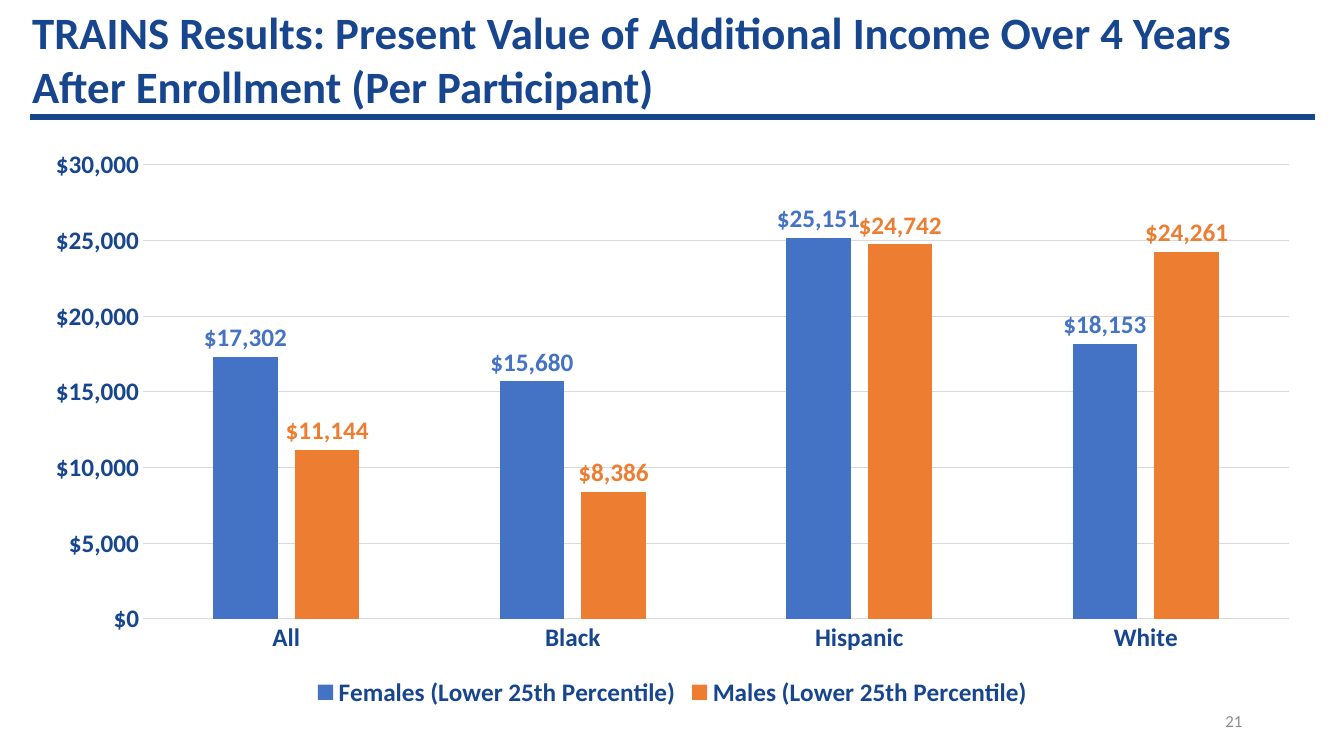
from lxml import etree
from pptx import Presentation
from pptx.chart.data import CategoryChartData
from pptx.dml.color import RGBColor
from pptx.enum.chart import XL_CHART_TYPE, XL_LABEL_POSITION, XL_LEGEND_POSITION, XL_TICK_MARK
from pptx.enum.text import MSO_ANCHOR, PP_ALIGN
from pptx.oxml.ns import qn
from pptx.util import Inches, Pt

NAVY = "17468E"
GRID_GRAY = "D9D9D9"
DOLLARS = '"$"#,##0'


def color(hex_string):
    return RGBColor.from_string(hex_string)


def style_font(font, size, hex_string, bold):
    font.name = "Calibri"
    font.size = Pt(size)
    font.bold = bold
    font.color.rgb = color(hex_string)


deck = Presentation()
deck.slide_width = Inches(13.33)
deck.slide_height = Inches(7.5)
slide = deck.slides.add_slide(deck.slide_layouts[6])

title = slide.shapes.add_textbox(Inches(0.22), Inches(0), Inches(12.81), Inches(1.18))
title.text_frame.word_wrap = True
headline = title.text_frame.paragraphs[0].add_run()
headline.text = ("TRAINS Results: Present Value of Additional Income Over 4 Years "
                 "After Enrollment (Per Participant)")
style_font(headline.font, 32, NAVY, True)

page_number = slide.shapes.add_textbox(Inches(9.42), Inches(6.95), Inches(3), Inches(0.4))
page_number.text_frame.word_wrap = True
page_number.text_frame.vertical_anchor = MSO_ANCHOR.MIDDLE
page_line = page_number.text_frame.paragraphs[0]
page_line.alignment = PP_ALIGN.RIGHT
page_digits = page_line.add_run()
page_digits.text = "21"
style_font(page_digits.font, 12, "8C8C8C", False)

title_rule = slide.shapes.add_connector(1, Inches(0.3), Inches(1.16), Inches(13.04), Inches(1.16))
title_rule.line.color.rgb = color(NAVY)
title_rule.line.width = Pt(4.5)
etree.SubElement(title_rule._element.spPr, qn("a:effectLst"))

incomes = CategoryChartData(number_format=DOLLARS)
incomes.categories = ["All", "Black", "Hispanic", "White"]
incomes.add_series("Females (Lower 25th Percentile)", [17302, 15680, 25151, 18153])
incomes.add_series("Males (Lower 25th Percentile)", [11144, 8386, 24742, 24261])
income_chart = slide.shapes.add_chart(
    XL_CHART_TYPE.COLUMN_CLUSTERED,
    Inches(0.3), Inches(1.37), Inches(12.74), Inches(5.7), incomes).chart
style_font(income_chart.font, 18, NAVY, True)
income_chart.has_title = False
income_chart.has_legend = True
income_chart.legend.position = XL_LEGEND_POSITION.BOTTOM
income_chart.legend.include_in_layout = False
style_font(income_chart.legend.font, 18, NAVY, True)

groups = income_chart.category_axis
dollars = income_chart.value_axis
for axis in (groups, dollars):
    axis.major_tick_mark = XL_TICK_MARK.NONE
    axis.minor_tick_mark = XL_TICK_MARK.NONE
    style_font(axis.tick_labels.font, 18, NAVY, True)

dollars.minimum_scale = 0
dollars.maximum_scale = 30000
dollars.major_unit = 5000
dollars.tick_labels.number_format = DOLLARS
dollars.tick_labels.number_format_is_linked = False
dollars.format.line.fill.background()
for thin_line in (groups.format.line, dollars.major_gridlines.format.line):
    thin_line.color.rgb = color(GRID_GRAY)
    thin_line.width = Pt(0.75)

columns = income_chart.plots[0]
columns.gap_width = 219
columns.overlap = -27
columns.vary_by_categories = False
for series, hue in zip(columns.series, ("4472C4", "ED7D31")):
    series.invert_if_negative = False
    series.format.fill.solid()
    series.format.fill.fore_color.rgb = color(hue)
    labels = series.data_labels
    labels.show_value = True
    labels.position = XL_LABEL_POSITION.OUTSIDE_END
    labels.number_format = DOLLARS
    labels.number_format_is_linked = False
    style_font(labels.font, 18, hue, True)

deck.save("out.pptx")
